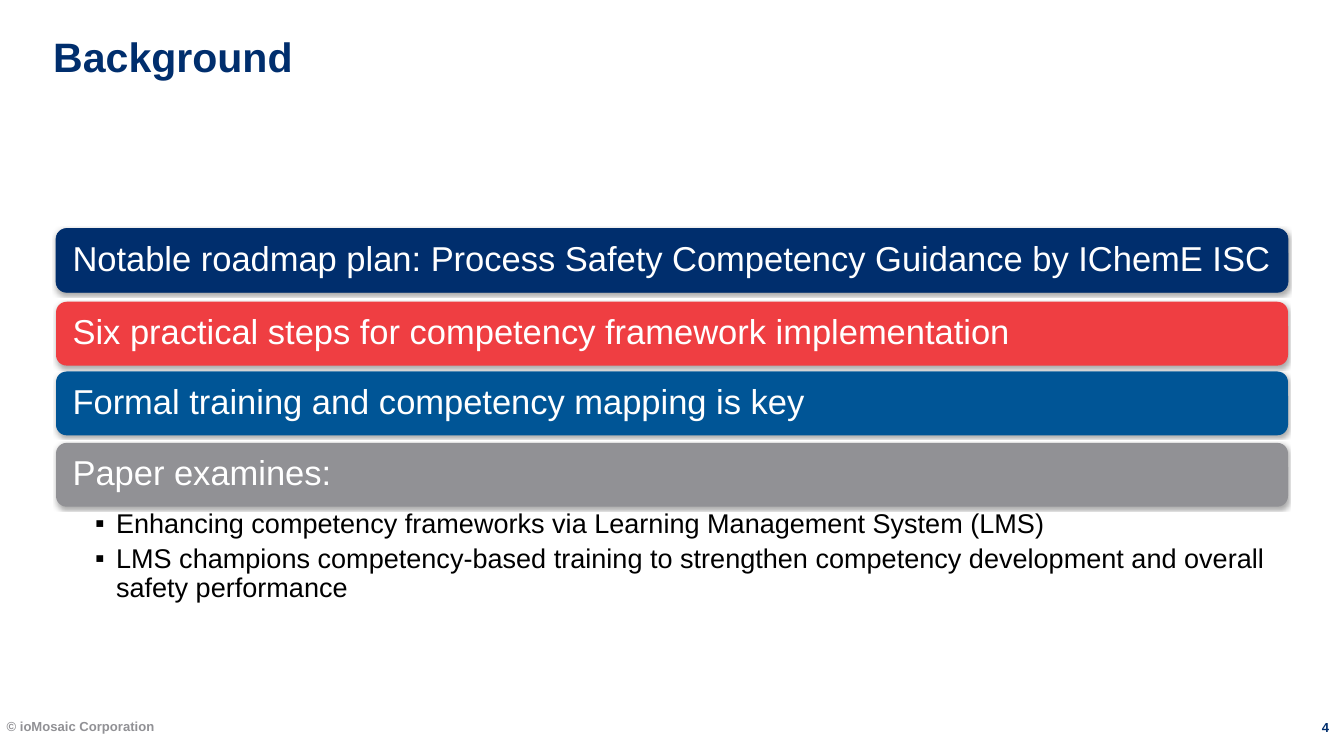
from lxml import etree
from pptx import Presentation
from pptx.dml.color import RGBColor
from pptx.enum import shapes, text
from pptx.oxml import ns
from pptx.util import Pt

NAVY = RGBColor(0x00, 0x2E, 0x6D)
RED = RGBColor(0xEF, 0x3E, 0x42)
BLUE = RGBColor(0x00, 0x55, 0x96)
GRAY = RGBColor(0x91, 0x91, 0x95)
WHITE = RGBColor(0xFF, 0xFF, 0xFF)
BLACK = RGBColor(0x00, 0x00, 0x00)

TITLE = "Background"
COPYRIGHT = "© ioMosaic Corporation"
PAGE = "4"
BANNERS = [  # top, fill, wording
    (244.8, NAVY, "Notable roadmap plan: Process Safety Competency Guidance by IChemE ISC"),
    (323.3, RED, "Six practical steps for competency framework implementation"),
    (398, BLUE, "Formal training and competency mapping is key"),
    (474.5, GRAY, "Paper examines:"),
]
TOPICS = [
    "Enhancing competency frameworks via Learning Management System (LMS)",
    "LMS champions competency-based training to strengthen competency "
    "development and overall safety performance",
]
LEFT, WIDTH, BANNER_HEIGHT = 60, 1320, 68.4
INDENT = 22.5


def add_xml(parent, tag, **attributes):
    return etree.SubElement(parent, ns.qn(tag), attributes)


def write(shape, lines, size, color, bold=False, insets=(7.2, 3.6, 7.2, 3.6),
          align=text.PP_ALIGN.LEFT, anchor=text.MSO_ANCHOR.TOP):
    frame = shape.text_frame
    frame.text = "\n".join(lines)
    frame.word_wrap = True
    frame.vertical_anchor = anchor
    (frame.margin_left, frame.margin_top,
     frame.margin_right, frame.margin_bottom) = map(Pt, insets)
    for paragraph in frame.paragraphs:
        paragraph.alignment = align
        for run in paragraph.runs:
            run.font.name, run.font.size, run.font.bold = "Arial", Pt(size), bold
            run.font.color.rgb = color
    return frame.paragraphs


def add_text(slide, box, lines, size, color, **options):
    return write(slide.shapes.add_textbox(*map(Pt, box)), lines, size, color, **options)


def add_banner(slide, top, fill, wording):
    banner = slide.shapes.add_shape(
        shapes.MSO_SHAPE.ROUNDED_RECTANGLE,
        Pt(LEFT), Pt(top), Pt(WIDTH), Pt(BANNER_HEIGHT))
    banner.fill.solid()
    banner.fill.fore_color.rgb = fill
    if fill == NAVY:
        banner.line.color.rgb = fill
        banner.line.width = Pt(0.75)
    else:
        banner.line.fill.background()
    banner.shadow.inherit = False
    effects = banner.element.spPr.find(ns.qn("a:effectLst"))
    shadow = add_xml(effects, "a:outerShdw", blurRad=str(Pt(3.1)), dist=str(Pt(1.8)),
                     dir="5400000", rotWithShape="0")
    add_xml(add_xml(shadow, "a:srgbClr", val="000000"), "a:alpha", val="35000")
    for paragraph in write(banner, [wording], 37, WHITE, insets=(14.4,) * 4,
                           anchor=text.MSO_ANCHOR.MIDDLE):
        paragraph.line_spacing = 0.9


def add_topics(slide, top):
    paragraphs = add_text(slide, (LEFT, top, WIDTH, 106), TOPICS, 29, BLACK,
                          insets=(41.8, 3.6, 20.9, 3.6))
    for paragraph in paragraphs:
        paragraph.line_spacing = 0.9
        paragraph.space_after = Pt(6)
        properties = paragraph._p.get_or_add_pPr()
        properties.set("marL", str(Pt(INDENT)))
        properties.set("indent", str(Pt(-INDENT)))
        add_xml(properties, "a:buFont", typeface="Arial")
        add_xml(properties, "a:buChar", char="▪")


def main():
    deck = Presentation()
    deck.slide_width, deck.slide_height = Pt(1440), Pt(810)
    slide = deck.slides.add_slide(deck.slide_layouts[6])
    add_text(slide, (57, 34, 1320, 108), [TITLE], 44, NAVY, bold=True,
             insets=(0, 0, 7.2, 0))
    add_text(slide, (0, 766, 960, 43), [COPYRIGHT], 14, GRAY, bold=True)
    add_text(slide, (1400.4, 770.4, 39.6, 32.4), [PAGE], 14, NAVY, bold=True,
             insets=(0,) * 4, align=text.PP_ALIGN.CENTER)
    for banner in BANNERS:
        add_banner(slide, *banner)
    add_topics(slide, BANNERS[-1][0] + BANNER_HEIGHT)
    deck.save("out.pptx")


if __name__ == "__main__":
    main()
